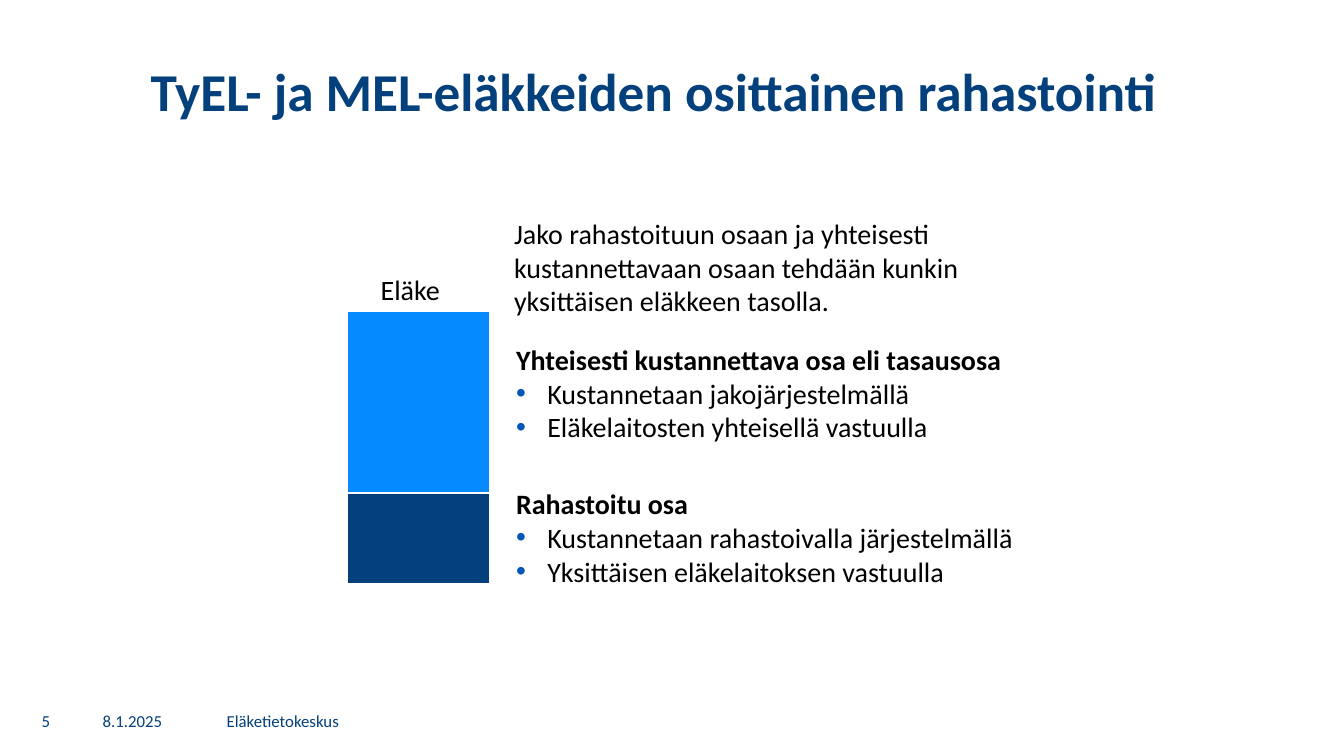
from dataclasses import dataclass

from lxml.etree import SubElement
from pptx import Presentation
from pptx.dml.color import RGBColor
from pptx.enum.shapes import MSO_SHAPE
from pptx.enum.text import MSO_ANCHOR as Anchor, PP_ALIGN as Align
from pptx.oxml.ns import qn
from pptx.slide import Slide
from pptx.text.text import _Paragraph as Paragraph
from pptx.util import Inches, Pt

COLORS = {
    "navy": "03407C",
    "azure": "058AFF",
    "bullet": "0356B5",
    "black": "000000",
    "white": "FFFFFF",
}
BAR_LEFT, BAR_WIDTH = 3.44, 1.42
BULLET_INDENT = 0.31


@dataclass(frozen=True)
class Caption:
    left: float
    top: float
    width: float
    height: float
    text: str
    bullets: tuple[str, ...] = ()
    size: int = 20
    color: str = "black"
    bold: bool = False
    align: Align = Align.LEFT
    anchor: Anchor = Anchor.TOP
    line_spacing: float = 1.0
    margin_right: float = 0.1


@dataclass(frozen=True)
class PensionPart:
    top: float
    height: float
    color: str


def footer(left: float, width: float, text: str, align: Align = Align.LEFT,
           margin_right: float = 0.1) -> Caption:
    return Caption(left, 6.95, width, 0.4, text, size=12, color="navy", align=align,
                   anchor=Anchor.MIDDLE, margin_right=margin_right)


CAPTIONS = (
    Caption(0, 0.6, 12.97, 0.72, "TyEL- ja MEL-eläkkeiden osittainen rahastointi",
            size=38, color="navy", bold=True, align=Align.CENTER, line_spacing=0.9),
    footer(0.92, 1.13, "8.1.2025"),
    footer(2.15, 10.26, "Eläketietokeskus", margin_right=0),
    footer(0.2, 0.51, "5", Align.CENTER),
    Caption(5, 2.1, 5.59, 1.11,
            "Jako rahastoituun osaan ja yhteisesti kustannettavaan osaan tehdään kunkin"
            "\vyksittäisen eläkkeen tasolla."),
    Caption(5.02, 3.35, 5.59, 1.11, "Yhteisesti kustannettava osa eli tasausosa",
            ("Kustannetaan jakojärjestelmällä", "Eläkelaitosten yhteisellä vastuulla"),
            bold=True),
    Caption(5.02, 4.78, 5.83, 1.11, "Rahastoitu osa",
            ("Kustannetaan rahastoivalla järjestelmällä",
             "Yksittäisen eläkelaitoksen vastuulla"), bold=True),
    Caption(BAR_LEFT, 2.65, 1.26, 0.44, "Eläke", align=Align.CENTER),
)
PENSION_PARTS = (PensionPart(3.08, 1.82, "azure"), PensionPart(4.89, 0.91, "navy"))


def rgb(name: str) -> RGBColor:
    return RGBColor.from_string(COLORS[name])


def add_bullet(paragraph: Paragraph) -> None:
    properties = paragraph._p.get_or_add_pPr()
    properties.set("marL", str(Inches(BULLET_INDENT)))
    properties.set("indent", str(-Inches(BULLET_INDENT)))
    bullet_color = SubElement(properties, qn("a:buClr"))
    SubElement(bullet_color, qn("a:srgbClr"), val=COLORS["bullet"])
    SubElement(properties, qn("a:buFont"), typeface="Arial")
    SubElement(properties, qn("a:buChar"), char="•")


def draw_caption(slide: Slide, caption: Caption) -> None:
    bounds = (caption.left, caption.top, caption.width, caption.height)
    frame = slide.shapes.add_textbox(*map(Inches, bounds)).text_frame
    frame_format = {
        "word_wrap": True,
        "vertical_anchor": caption.anchor,
        "margin_right": Inches(caption.margin_right),
    }
    for attribute, value in frame_format.items():
        setattr(frame, attribute, value)
    for index, line in enumerate((caption.text, *caption.bullets)):
        paragraph = frame.add_paragraph() if index else frame.paragraphs[0]
        paragraph.text = line
        paragraph.alignment = caption.align
        paragraph.line_spacing = caption.line_spacing
        if index:
            add_bullet(paragraph)
        font_format = {
            "name": "Calibri",
            "size": Pt(caption.size),
            "bold": caption.bold and index == 0,
        }
        for run in paragraph.runs:
            for attribute, value in font_format.items():
                setattr(run.font, attribute, value)
            run.font.color.rgb = rgb(caption.color)


def draw_pension_part(slide: Slide, part: PensionPart) -> None:
    bounds = (BAR_LEFT, part.top, BAR_WIDTH, part.height)
    block = slide.shapes.add_shape(MSO_SHAPE.RECTANGLE, *map(Inches, bounds))
    block.shadow.inherit = False
    block.fill.solid()
    block.fill.fore_color.rgb = rgb(part.color)
    block.line.color.rgb = rgb("white")
    block.line.width = Pt(2)


def main() -> None:
    deck = Presentation()
    deck.slide_width, deck.slide_height = Inches(13.33), Inches(7.5)
    slide = deck.slides.add_slide(deck.slide_layouts[6])
    for part in PENSION_PARTS:
        draw_pension_part(slide, part)
    for caption in CAPTIONS:
        draw_caption(slide, caption)
    deck.save("out.pptx")


if __name__ == "__main__":
    main()
